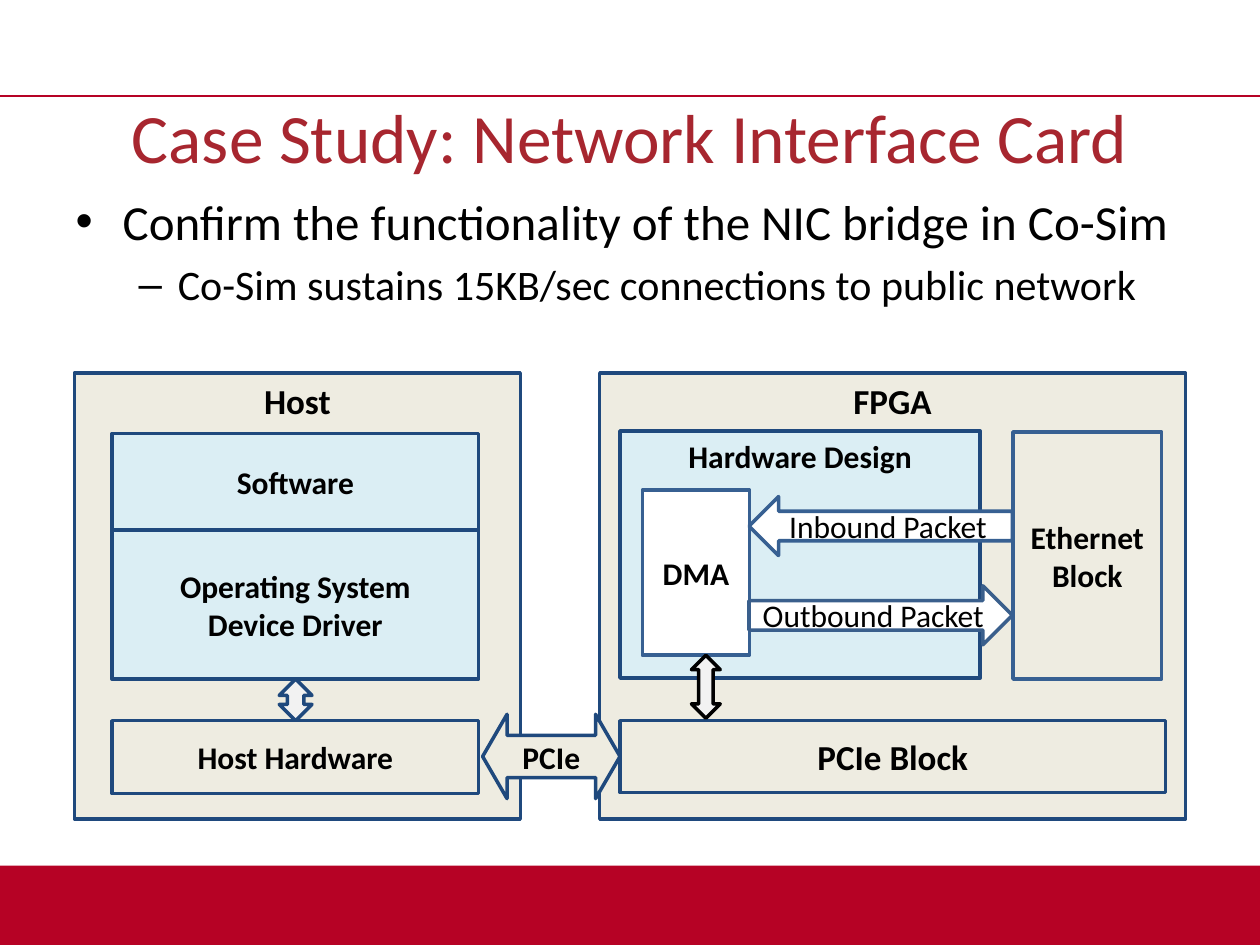
from dataclasses import dataclass

from lxml.etree import SubElement
from pptx import Presentation
from pptx.dml.color import RGBColor
from pptx.enum.shapes import MSO_CONNECTOR, MSO_SHAPE
from pptx.enum.text import MSO_ANCHOR, MSO_AUTO_SIZE, PP_ALIGN
from pptx.oxml.ns import qn
from pptx.util import Cm, Pt


@dataclass(frozen=True)
class Theme:
    font: str = "Calibri"
    crimson: str = "B60225"
    title: str = "A7262F"
    ink: str = "000000"
    white: str = "FFFFFF"
    beige: str = "EEECE1"
    sky: str = "DBEEF4"
    pale_grey: str = "F2F2F2"
    navy: str = "1F497D"
    steel: str = "376092"
    slate: str = "3A5F8C"
    title_size: float = 39.6
    bullet_sizes: tuple = (28, 24)
    heading_size: int = 20
    label_size: int = 18
    outline: int = 2


THEME = Theme()
SLIDE_WIDTH, SLIDE_HEIGHT = 25.4, 19.05


def rgb(color):
    return RGBColor.from_string(color)


def place(shape, left, top, width, height):
    shape.left, shape.top = Cm(left), Cm(top)
    shape.width, shape.height = Cm(width), Cm(height)


def add_run(paragraph, text, size, color=THEME.ink, bold=False):
    run = paragraph.add_run()
    run.text = text
    run.font.name = THEME.font
    run.font.size = Pt(size)
    run.font.bold = bold
    run.font.color.rgb = rgb(color)


def add_decoration(slide):
    """Draw the rule above the title and the band at the foot."""
    band_height = 1.6
    band = slide.shapes.add_shape(
        MSO_SHAPE.RECTANGLE, 0, Cm(SLIDE_HEIGHT - band_height), Cm(SLIDE_WIDTH), Cm(band_height))
    band.shadow.inherit = False
    band.fill.solid()
    band.fill.fore_color.rgb = rgb(THEME.crimson)
    band.line.fill.background()

    rule = slide.shapes.add_connector(
        MSO_CONNECTOR.STRAIGHT, 0, Cm(1.93), Cm(SLIDE_WIDTH), Cm(1.93))
    rule.line.color.rgb = rgb(THEME.crimson)
    rule.line.width = Pt(1)
    SubElement(rule._element.spPr, qn("a:effectLst"))


def fill_title(slide, text):
    title = slide.shapes.title
    place(title, 0, 1.93, SLIDE_WIDTH, 1.6)
    frame = title.text_frame
    frame.auto_size = MSO_AUTO_SIZE.NONE
    frame.vertical_anchor = MSO_ANCHOR.MIDDLE
    frame.paragraphs[0].alignment = PP_ALIGN.CENTER
    add_run(frame.paragraphs[0], text, THEME.title_size, THEME.title)


def fill_bullets(slide, points):
    """Write one (level, text) pair per paragraph into the body."""
    markers = (("•", 0.95, 0.95), ("–", 2.06, 0.79))
    body = slide.placeholders[1]
    place(body, 1.27, 3.73, 23.42, 2.87)
    frame = body.text_frame
    frame.auto_size = MSO_AUTO_SIZE.NONE
    for index, (level, text) in enumerate(points):
        paragraph = frame.add_paragraph() if index else frame.paragraphs[0]
        marker, margin, hanging = markers[level]
        size = THEME.bullet_sizes[level]
        paragraph.level = level
        paragraph.space_before = Pt(0.2 * size if index else 0)
        properties = paragraph._p.get_or_add_pPr()
        properties.set("marL", str(Cm(margin)))
        properties.set("indent", str(-Cm(hanging)))
        SubElement(properties, qn("a:buChar"), char=marker)
        add_run(paragraph, text, size)


def add_figure(slide, preset, bounds, fill, line):
    figure = slide.shapes.add_shape(preset, *map(Cm, bounds))
    figure.shadow.inherit = False
    figure.fill.solid()
    figure.fill.fore_color.rgb = rgb(fill)
    figure.line.color.rgb = rgb(line)
    figure.line.width = Pt(THEME.outline)
    return figure


def write_label(figure, lines, size=THEME.label_size, bold=True, anchor=MSO_ANCHOR.MIDDLE):
    frame = figure.text_frame
    frame.word_wrap = True
    frame.vertical_anchor = anchor
    for index, text in enumerate(lines):
        paragraph = frame.add_paragraph() if index else frame.paragraphs[0]
        paragraph.alignment = PP_ALIGN.CENTER
        add_run(paragraph, text, size, bold=bold)


def add_block(slide, bounds, lines, fill=THEME.beige, line=THEME.navy, **label):
    block = add_figure(slide, MSO_SHAPE.RECTANGLE, bounds, fill, line)
    write_label(block, lines, **label)


def add_arrow(slide, preset, bounds, fill, line, text=None, bold=True):
    arrow = add_figure(slide, preset, bounds, fill, line)
    if text:
        arrow.text_frame.margin_left = arrow.text_frame.margin_right = 0
        write_label(arrow, [text], bold=bold)
    return arrow


def add_fpga(slide):
    heading = {"size": THEME.heading_size, "anchor": MSO_ANCHOR.TOP}
    add_block(slide, (12.09, 7.52, 11.81, 8.99), ["FPGA"], **heading)
    add_block(slide, (12.5, 14.53, 11, 1.45), ["PCIe Block"], size=THEME.heading_size)
    add_block(slide, (12.5, 8.69, 7.26, 4.98), ["Hardware Design"], THEME.sky,
              anchor=MSO_ANCHOR.TOP)
    add_block(slide, (12.95, 9.88, 2.16, 3.33), ["DMA"], THEME.white, THEME.steel)
    add_arrow(slide, MSO_SHAPE.UP_DOWN_ARROW, (13.94, 13.21, 0.58, 1.27),
              THEME.pale_grey, THEME.ink)
    packets = (
        (MSO_SHAPE.LEFT_ARROW, 10.01, THEME.steel, "Inbound Packet"),
        (MSO_SHAPE.RIGHT_ARROW, 11.81, THEME.slate, "Outbound Packet"),
    )
    for preset, top, line, text in packets:
        add_arrow(slide, preset, (15.1, top, 5.31, 1.19), THEME.white, line, text, bold=False)


def add_host(slide):
    add_block(slide, (1.5, 7.52, 8.99, 8.99), ["Host"],
              size=THEME.heading_size, anchor=MSO_ANCHOR.TOP)
    layers = (
        (8.74, 1.95, THEME.sky, ["Software"]),
        (10.69, 3, THEME.sky, ["Operating System", "Device Driver"]),
        (14.53, 1.47, THEME.beige, ["Host Hardware"]),
    )
    for top, height, fill, lines in layers:
        add_block(slide, (2.26, top, 7.39, height), lines, fill)
    add_arrow(slide, MSO_SHAPE.UP_DOWN_ARROW, (5.63, 13.69, 0.66, 0.84),
              THEME.pale_grey, THEME.navy)


def main():
    presentation = Presentation()
    presentation.slide_width = Cm(SLIDE_WIDTH)
    presentation.slide_height = Cm(SLIDE_HEIGHT)
    slide = presentation.slides.add_slide(presentation.slide_layouts[1])

    add_decoration(slide)
    fill_title(slide, "Case Study: Network Interface Card")
    fill_bullets(slide, (
        (0, "Confirm the functionality of the NIC bridge in Co-Sim"),
        (1, "Co-Sim sustains 15KB/sec connections to public network"),
    ))
    add_fpga(slide)
    add_host(slide)
    pcie_link = add_arrow(slide, MSO_SHAPE.LEFT_RIGHT_ARROW, (9.73, 14.4, 2.77, 1.7),
                          THEME.beige, THEME.navy, "PCIe")
    pcie_link.adjustments[1] = 0.29
    add_block(slide, (20.42, 8.71, 3, 4.98), ["Ethernet Block"], line=THEME.steel)

    presentation.save("out.pptx")


if __name__ == "__main__":
    main()
